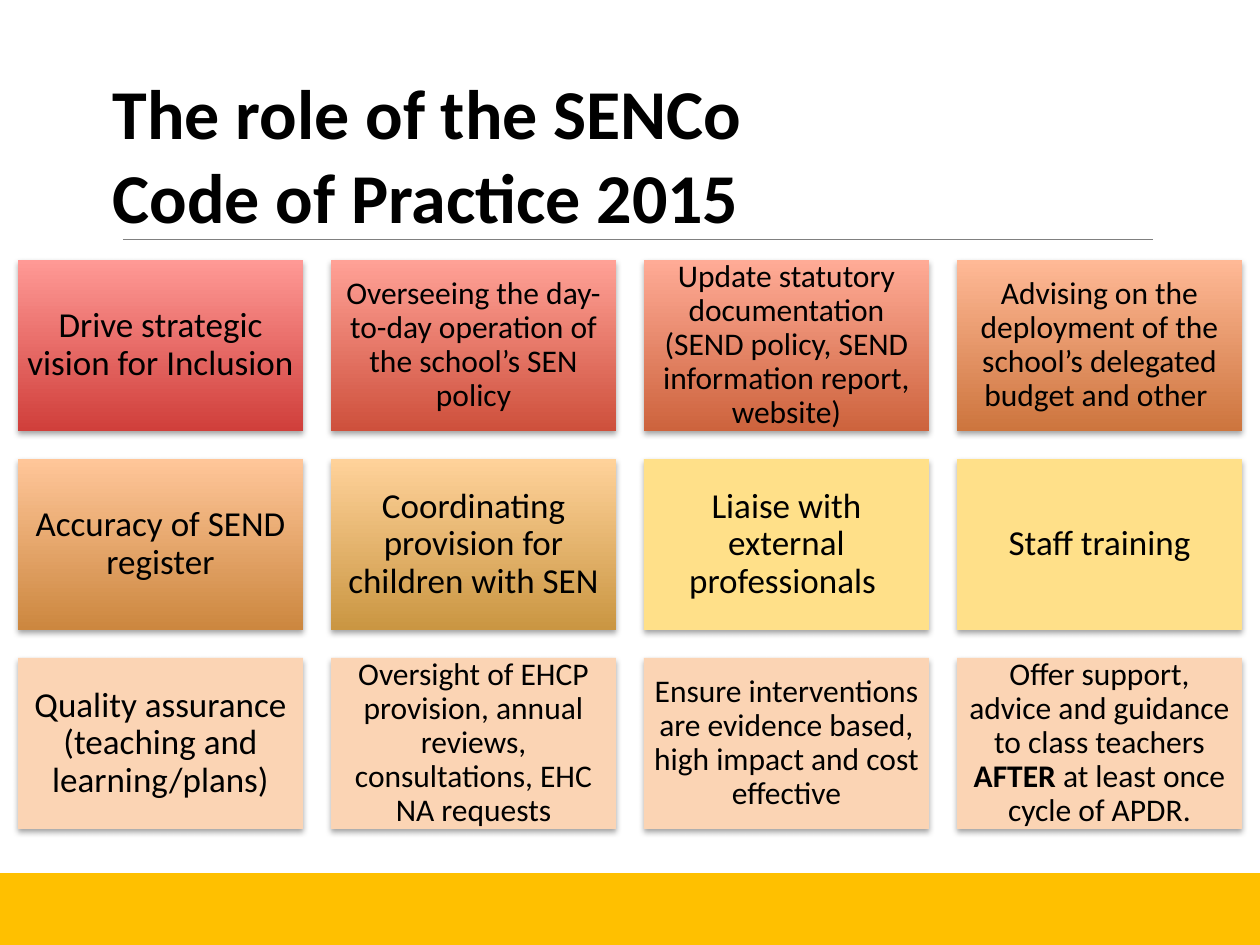
from lxml import etree
from pptx import Presentation
from pptx.dml.color import RGBColor
from pptx.enum.shapes import MSO_CONNECTOR, MSO_SHAPE
from pptx.enum.text import MSO_ANCHOR, MSO_AUTO_SIZE, PP_ALIGN
from pptx.oxml import parse_xml
from pptx.oxml.ns import nsdecls, qn
from pptx.util import Emu, Pt

RECTANGLE = MSO_SHAPE.RECTANGLE
STRAIGHT = MSO_CONNECTOR.STRAIGHT
TOP, MIDDLE = MSO_ANCHOR.TOP, MSO_ANCHOR.MIDDLE
LEFT, CENTER = PP_ALIGN.LEFT, PP_ALIGN.CENTER
NO_AUTOFIT = MSO_AUTO_SIZE.NONE

TITLE_ONLY = 5
PX_PER_INCH = 126
FONT = "Calibri"
COLORS = {
    "text": "000000",
    "rule": "808080",
    "band": "FFC000",
    "yellow": "FFE089",
    "peach": "FBD4B4",
    "shadow": "000000",
}

ROLES = [
    ("Drive strategic vision for Inclusion", 20, ("D03F3B", "FF9995")),
    ("Overseeing the day-to-day operation of the school’s SEN policy", 18, ("CE503C", "FFA196")),
    ("Update statutory documentation (SEND policy, SEND information report, website)", 18,
     ("CD633D", "FFAB96")),
    ("Advising on the deployment of the school’s delegated budget and other ", 18,
     ("CD753E", "FFB996")),
    ("Accuracy of SEND register", 20, ("CC873F", "FFC699")),
    ("Coordinating provision for children with SEN", 20, ("CA9642", "FFD29A")),
    ("Liaise with external professionals ", 20, (COLORS["yellow"],)),
    ("Staff training", 20, (COLORS["yellow"],)),
    ("Quality assurance (teaching and learning/plans)", 20, (COLORS["peach"],)),
    ("Oversight of EHCP provision, annual reviews, consultations, EHC NA requests", 18,
     (COLORS["peach"],)),
    ("Ensure interventions are evidence based, high impact and cost effective", 18,
     (COLORS["peach"],)),
    ("Offer support, advice and guidance to class teachers **AFTER** at least once cycle of APDR.",
     18, (COLORS["peach"],)),
]


def px(length):
    return Emu(round(length * 914400 / PX_PER_INCH))


def rgb(color):
    return RGBColor.from_string(color)


def write_text(frame, text, size, align, anchor, bold=False, spacing=None):
    frame.word_wrap = True
    frame.auto_size = NO_AUTOFIT
    frame.vertical_anchor = anchor
    para = frame.paragraphs[0]
    para.alignment = align
    para.line_spacing = spacing
    for index, part in enumerate(text.split("**")):
        if index:
            bold = not bold
        for line_number, line in enumerate(part.split("\n")):
            if line_number:
                para.add_line_break()
            span = para.add_run()
            span.text = line
            span.font.name = FONT
            span.font.size = Pt(size)
            span.font.bold = bold
            span.font.color.rgb = rgb(COLORS["text"])


def add_rectangle(page, box, colors):
    shape = page.shapes.add_shape(RECTANGLE, *map(px, box))
    shape.shadow.inherit = False
    shape.line.fill.background()
    if len(colors) == 1:
        shape.fill.solid()
        shape.fill.fore_color.rgb = rgb(colors[0])
    else:
        shape.fill.gradient()
        shape.fill.gradient_angle = 90
        for stop, color in zip(shape.fill.gradient_stops, colors):
            stop.color.rgb = rgb(color)
    return shape


def add_shadow(shape):
    effects = shape._element.spPr.find(qn("a:effectLst"))
    effects.append(parse_xml(
        f'<a:outerShdw {nsdecls("a")} blurRad="40000" dist="23000" dir="5400000" rotWithShape="0">'
        f'<a:srgbClr val="{COLORS["shadow"]}"><a:alpha val="35000"/></a:srgbClr></a:outerShdw>'))


def draw_title(page, box):
    title = page.shapes.title
    title.left, title.top, title.width, title.height = map(px, box)
    write_text(title.text_frame, "The role of the SENCo \nCode of Practice 2015",
               size=40, align=LEFT, anchor=TOP, bold=True)


def draw_rule(page, left, right, top):
    rule = page.shapes.add_connector(STRAIGHT, px(left), px(top), px(right), px(top))
    rule.line.color.rgb = rgb(COLORS["rule"])
    rule.line.width = Pt(0.5)
    etree.SubElement(rule._element.spPr, qn("a:effectLst"))


def draw_roles(page, box, columns=4, gap=28):
    left, top, width, height = box
    rows = len(ROLES) // columns
    card_width = (width - gap * (columns - 1)) // columns
    card_height = (height - gap * (rows - 1)) // rows
    for index, (text, size, colors) in enumerate(ROLES):
        row, column = divmod(index, columns)
        card = add_rectangle(page, (left + column * (card_width + gap),
                                    top + row * (card_height + gap),
                                    card_width, card_height), colors)
        add_shadow(card)
        frame = card.text_frame
        frame.margin_left = frame.margin_right = px(9)
        frame.margin_top = frame.margin_bottom = px(9)
        write_text(frame, text, size=size, align=CENTER, anchor=MIDDLE, spacing=0.9)


def draw_footer(page, box, strip=9):
    left, top, width, height = box
    add_rectangle(page, (left, top + strip, width, height - strip), (COLORS["band"],))
    add_rectangle(page, (left, top, width, strip), (COLORS["band"],))


def main():
    deck = Presentation()
    deck.slide_width, deck.slide_height = px(1260), px(945)
    page = deck.slides.add_slide(deck.slide_layouts[TITLE_ONLY])
    draw_footer(page, (0, 873, 1260, 72))
    draw_rule(page, 123, 1153, 239)
    draw_roles(page, (18, 260, 1224, 569))
    draw_title(page, (100, 63, 954, 183))
    deck.save("out.pptx")


if __name__ == "__main__":
    main()
